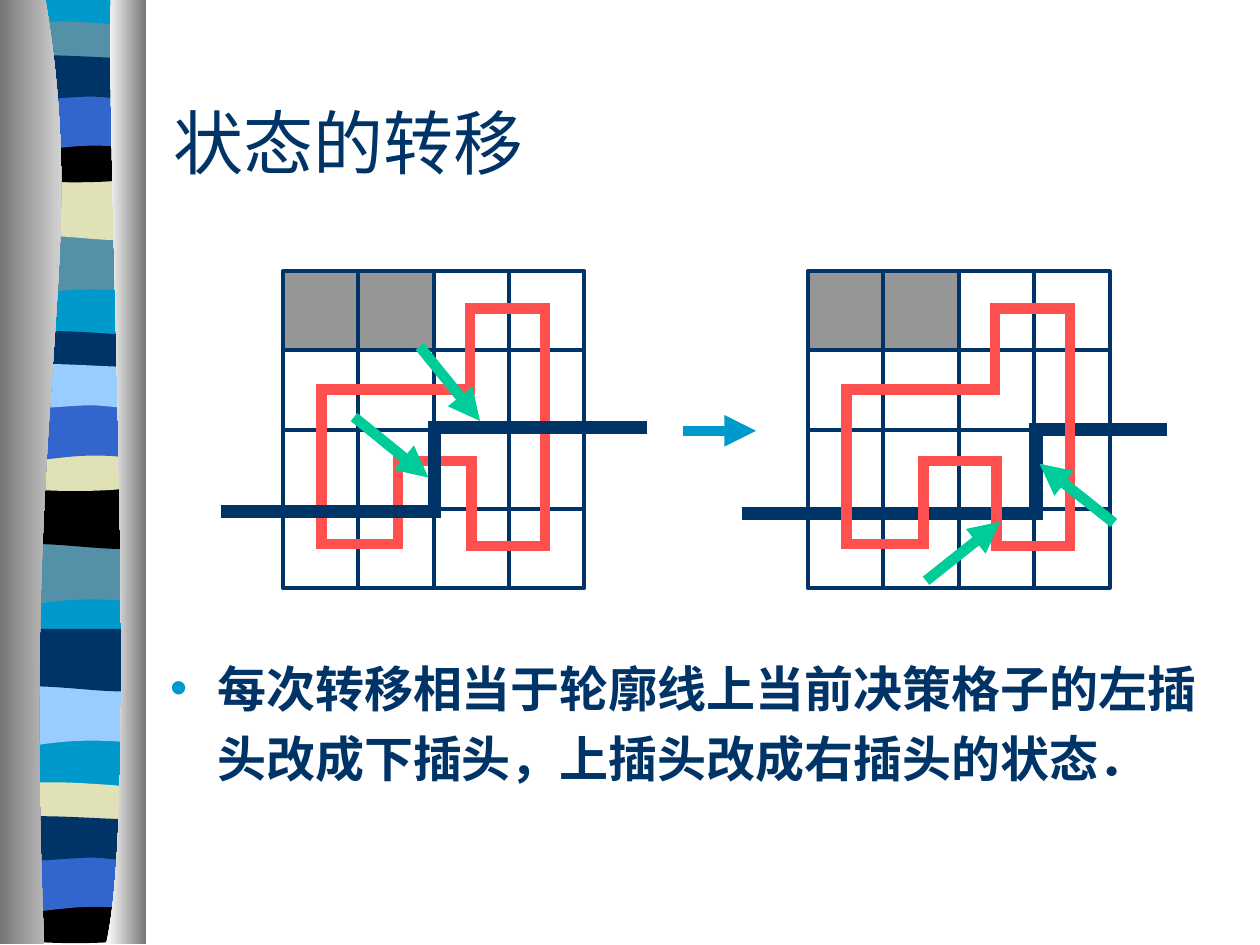
"""Builds a slide on state transitions along the contour line of a grid."""
from dataclasses import dataclass
from itertools import chain, pairwise, product

from lxml import etree
from pptx import Presentation
from pptx.dml.color import RGBColor
from pptx.enum.shapes import MSO_CONNECTOR, MSO_SHAPE
from pptx.enum.text import MSO_ANCHOR, MSO_AUTO_SIZE, PP_ALIGN
from pptx.oxml.ns import qn
from pptx.util import Pt

STRAIGHT = MSO_CONNECTOR.STRAIGHT
RECTANGLE = MSO_SHAPE.RECTANGLE
MIDDLE, TOP = MSO_ANCHOR.MIDDLE, MSO_ANCHOR.TOP
LEFT = PP_ALIGN.LEFT
NO_AUTOFIT = MSO_AUTO_SIZE.NONE


@dataclass(frozen=True)
class Theme:
    navy: str = "003366"
    cyan: str = "0099CC"
    teal: str = "5490A8"
    blue: str = "3366CC"
    sky: str = "99CCFF"
    sand: str = "E1E1B7"
    black: str = "000000"
    red: str = "FF5050"
    green: str = "00CC99"
    blocked: str = "969696"
    shade: str = "767676"
    white: str = "FFFFFF"
    title_font: str = "Times New Roman"
    body_font: str = "Arial"
    title_size: float = 40
    body_size: float = 28
    grid_line: float = 2.25
    loop_line: float = 6
    contour_line: float = 7.5


THEME = Theme()
WIDTH, HEIGHT = 720, 540
CELL_WIDTH, CELL_HEIGHT = 43.1, 45.3
GRID_LEFT, GRID_TOP, GRID_SIZE = 161.6, 154.9, 4
DIAGRAM_SHIFT = 300.1
BLOCKED_CELLS = [(0, 0), (0, 1)]
X1, X2 = 3.8, 81.8

SWELL = [[(X2, 0)], [(X2, 34)], [(28, 28), (17, 39.6), (X1, 34)], [(X1, 0)]]
DRAPE = [[(X2, 0)], [(X2, 34)], [(69, 39.6), (28, 29.8), (X1, 34)], [(X1, 0)]]
LENS = [[(X2, 3.6)], [(X2, 20.9)], [(69, 24), (17, 24), (X1, 20.9)], [(X1, 3.6)],
        [(8.6, 0), (20.6, 0.7), (33.6, 0.7)], [(46.6, 0.7), (72, 2.9), (X2, 3.6)]]
BOWL = [[(X2, 0)], [(X2, 23.2)], [(69, 27.4), (17, 27.4), (X1, 23.2)], [(X1, 0)],
        [(51.6, 3.6), (65.3, 0), (X2, 0)]]
ARCH = [[(X2, 0)], [(X2, 34)], [(69.8, 30), (64.6, 30), (51.6, 30)],
        [(38.6, 30), (15.5, 34), (X1, 34)], [(X1, 0)]]
RIPPLE = [[(X2, 3.6)], [(X2, 25.7)], [(76.8, 29.5), (64.6, 25.7), (51.6, 25.7)],
          [(38.6, 25.7), (12, 29.5), (X1, 25.7)], [(X1, 3.6)],
          [(14.8, 0), (56.6, 3.6), (69.6, 3.6)], [(82.8, 3.6), (79, 3.6), (X2, 3.6)]]
BASE = [[(X2, 0)], [(X2, 538)], [(X1, 538)], [(X1, 0)]]
BANDS = [
    (BASE, 0, THEME.cyan),
    (SWELL, 133.2, THEME.teal), (DRAPE, 101.5, THEME.sand),
    (LENS, 11.5, THEME.teal), (BOWL, 77.8, THEME.black),
    (ARCH, 53.3, THEME.blue), (RIPPLE, 29.5, THEME.navy),
    (SWELL, 310.3, THEME.teal), (DRAPE, 277.9, THEME.black),
    (LENS, 188.6, THEME.navy), (BOWL, 254.2, THEME.sand),
    (ARCH, 230.4, THEME.blue), (RIPPLE, 205.9, THEME.sky),
    (SWELL, 391, THEME.sky), (DRAPE, 359.3, THEME.navy),
    (LENS, 446.4, THEME.sand), (BOWL, 512.6, THEME.black),
    (ARCH, 488.2, THEME.blue), (RIPPLE, 464.4, THEME.navy),
]
LEFT_RIBBON = [[(26, 0)], [(52, 155.5), (12, 213), (25.2, 539.5)],
               [(0, 539.5)], [(0, 0)]]
RIGHT_RIBBON = [[(63.4, 0)], [(60.5, 90), (79.9, 465), (60.5, 539.5)],
                [(83.5, 539.5)], [(83.5, 0)]]
LOOP = [(183.6, 222.5), (268.6, 222.5), (268.6, 176.4), (311.4, 176.4),
        (311.4, 312), (269.3, 312), (269.3, 263.5), (227.5, 263.5),
        (227.5, 311), (183.6, 311), (183.6, 222.5)]
CONTOUR_BEFORE = [(129.8, 292.3), (248.4, 292.3), (248.4, 244.4), (366.2, 244.4)]
CONTOUR_AFTER = [(427.6, 293.5), (592, 293.5), (592, 245.6), (663.1, 245.6)]
PLUG_ARROWS = [((202.3, 238.3), (244.8, 272.9)), ((636.5, 298.8), (594, 265)),
               ((239.8, 198), (274.3, 240.5)), ((529.2, 331.9), (571.7, 298.1))]


class SlideBuilder:
    """Draws styled elements on the current slide."""

    def __init__(self, slide, theme):
        self.slide, self.theme = slide, theme

    def outline(self, segments, colours, top=0):
        """Add a closed outline of straight and three-point Bezier segments."""
        points = [(Pt(x), Pt(y + top)) for x, y in chain.from_iterable(segments)]
        builder = self.slide.shapes.build_freeform(*points[0])
        builder.add_line_segments(points[1:], close=True)
        shape = builder.convert_to_shape()
        lines = iter(list(shape._element.iter(qn("a:lnTo"))))
        for segment in segments[1:]:
            first, *others = [next(lines) for _ in segment]
            if others:
                first.tag = qn("a:cubicBezTo")
                for line in others:
                    first.append(line[0])
                    line.getparent().remove(line)
        shape.shadow.inherit = False
        shape.line.fill.background()
        if len(colours) == 1:
            shape.fill.solid()
            shape.fill.fore_color.rgb = RGBColor.from_string(colours[0])
            return
        shape.fill.gradient()
        shape.fill.gradient_angle = 0
        for stop, colour in zip(shape.fill.gradient_stops, colours):
            stop.color.rgb = RGBColor.from_string(colour)

    def cell(self, row, column, shift, fill=None):
        """Add one grid cell."""
        shape = self.slide.shapes.add_shape(
            RECTANGLE, Pt(GRID_LEFT + shift + column * CELL_WIDTH),
            Pt(GRID_TOP + row * CELL_HEIGHT), Pt(CELL_WIDTH), Pt(CELL_HEIGHT))
        shape.shadow.inherit = False
        shape.line.color.rgb = RGBColor.from_string(self.theme.navy)
        shape.line.width = Pt(self.theme.grid_line)
        if fill:
            shape.fill.solid()
            shape.fill.fore_color.rgb = RGBColor.from_string(fill)
        else:
            shape.fill.background()

    def line(self, start, end, colour, width, arrow=False):
        """Add a straight line, optionally ending in an arrowhead."""
        connector = self.slide.shapes.add_connector(
            STRAIGHT, *(Pt(value) for value in (*start, *end)))
        connector.line.color.rgb = RGBColor.from_string(colour)
        connector.line.width = Pt(width)
        if arrow:
            etree.SubElement(connector.line._get_or_add_ln(),
                             qn("a:tailEnd"), type="triangle")
        etree.SubElement(connector._element.spPr, qn("a:effectLst"))

    def bent_line(self, corners, colour, width, shift=0):
        """Add axis-parallel lines that overlap to fill their corners."""
        for (x1, y1), (x2, y2) in pairwise(corners):
            length = abs(x2 - x1) + abs(y2 - y1)
            dx, dy = (width / 2 * delta / length for delta in (x2 - x1, y2 - y1))
            self.line((x1 - dx + shift, y1 - dy), (x2 + dx + shift, y2 + dy),
                      colour, width)

    def contour(self, corners):
        """Add a contour line."""
        self.bent_line(corners, self.theme.navy, self.theme.contour_line)

    def grid(self, shift):
        """Add the grid with its loop and blocked cells."""
        for position in product(range(GRID_SIZE), repeat=2):
            if position not in BLOCKED_CELLS:
                self.cell(*position, shift)
        self.bent_line(LOOP, self.theme.red, self.theme.loop_line, shift)
        for position in BLOCKED_CELLS:
            self.cell(*position, shift, self.theme.blocked)

    def text(self, placeholder, box, text, font, size, anchor, bold=False):
        """Place and format a placeholder and return its paragraph."""
        (placeholder.left, placeholder.top,
         placeholder.width, placeholder.height) = (Pt(value) for value in box)
        frame = placeholder.text_frame
        frame.text = text
        frame.word_wrap = True
        frame.auto_size = NO_AUTOFIT
        frame.vertical_anchor = anchor
        paragraph = frame.paragraphs[0]
        paragraph.alignment = LEFT
        run_font = paragraph.runs[0].font
        run_font.name, run_font.size, run_font.bold = font, Pt(size), bold
        run_font.color.rgb = RGBColor.from_string(self.theme.navy)
        return paragraph

    def bullet(self, paragraph, indent):
        """Give a paragraph a coloured bullet and hanging indent."""
        paragraph.line_spacing = 1.2
        paragraph.space_before = Pt(self.theme.body_size * 0.2)
        properties = paragraph._p.get_or_add_pPr()
        properties.set("marL", str(Pt(indent)))
        properties.set("indent", str(-Pt(indent)))
        colour = etree.SubElement(properties, qn("a:buClr"))
        etree.SubElement(colour, qn("a:srgbClr"), val=self.theme.cyan)
        etree.SubElement(properties, qn("a:buChar"), char="•")


def main():
    """Build and save the presentation."""
    presentation = Presentation()
    presentation.slide_width, presentation.slide_height = Pt(WIDTH), Pt(HEIGHT)
    slide = presentation.slides.add_slide(presentation.slide_layouts[1])
    builder = SlideBuilder(slide, THEME)
    for segments, top, colour in BANDS:
        builder.outline(segments, [colour], top)
    builder.outline(LEFT_RIBBON, [THEME.shade, THEME.white])
    builder.outline(RIGHT_RIBBON, [THEME.white, THEME.shade])

    builder.text(slide.shapes.title, (92.2, 36, 231.8, 90), "状态的转移",
                 THEME.title_font, THEME.title_size, MIDDLE)
    builder.grid(0)
    builder.contour(CONTOUR_BEFORE)
    builder.line((390.2, 246.2), (432, 246.2), THEME.cyan, THEME.loop_line, True)
    builder.contour(CONTOUR_AFTER)
    builder.grid(DIAGRAM_SHIFT)
    paragraph = builder.text(
        slide.placeholders[1], (90, 365.8, 612, 90),
        "每次转移相当于轮廓线上当前决策格子的左插头改成下插头，上插头改成右插头的状态．",
        THEME.body_font, THEME.body_size, TOP, True)
    builder.bullet(paragraph, 27)
    for start, end in PLUG_ARROWS:
        builder.line(start, end, THEME.green, THEME.loop_line, True)
    presentation.save("out.pptx")


if __name__ == "__main__":
    main()
